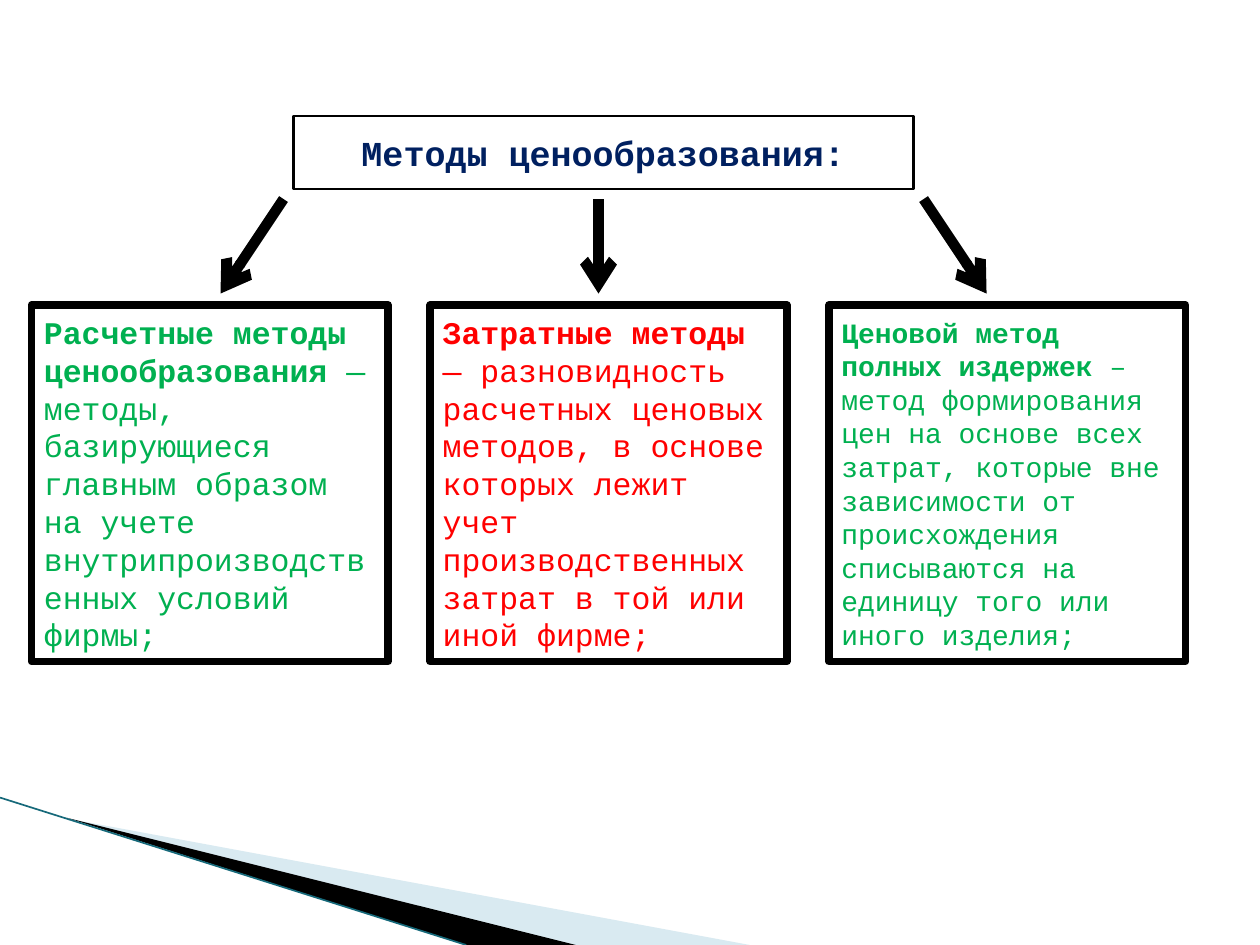
from lxml import etree
from pptx import Presentation
from pptx.dml.color import RGBColor
from pptx.enum.shapes import MSO_CONNECTOR as CONN, MSO_SHAPE as SHAPE
from pptx.enum.text import MSO_ANCHOR as ANCHOR, MSO_AUTO_SIZE as AUTO, PP_ALIGN as ALIGN
from pptx.oxml.ns import qn
from pptx.util import Inches, Pt

FONT = "Courier New"
BLACK, WHITE, NAVY = "000000", "FFFFFF", "002060"
GREEN, RED, PALE, TEAL = "00B050", "FF0000", "A0CBDC", "16697A"


def rgb(value):
    return RGBColor.from_string(value)


def add_run(p, text, size=18, color=BLACK, bold=False):
    r = p.add_run()
    r.text = text
    r.font.name, r.font.size, r.font.bold = FONT, Pt(size), bold
    r.font.color.rgb = rgb(color)


class Deck:
    def __init__(self):
        self.prs = Presentation()
        self.prs.slide_width, self.prs.slide_height = Inches(10), Inches(7.5)
        self.s = self.prs.slides.add_slide(self.prs.slide_layouts[5])

    def outline(self, sp, width):
        sp.fill.solid()
        sp.fill.fore_color.rgb = rgb(WHITE)
        sp.line.color.rgb = rgb(BLACK)
        sp.line.width = Pt(width)

    def title(self, text, x, y, w, h):
        sp = self.s.shapes.title
        sp.left, sp.top, sp.width, sp.height = map(Inches, (x, y, w, h))
        self.outline(sp, 1.5)
        tf = sp.text_frame
        tf.auto_size, tf.vertical_anchor = AUTO.NONE, ANCHOR.MIDDLE
        p = tf.paragraphs[0]
        p.alignment = ALIGN.CENTER
        add_run(p, text, size=20, color=NAVY, bold=True)

    def box(self, x, y, side, term, meaning, size, color):
        sp = self.s.shapes.add_shape(SHAPE.RECTANGLE, *map(Inches, (x, y, side, side)))
        sp.shadow.inherit = False
        self.outline(sp, 4.33)
        tf = sp.text_frame
        tf.word_wrap, tf.vertical_anchor = True, ANCHOR.MIDDLE
        p = tf.paragraphs[0]
        p.alignment = ALIGN.LEFT
        add_run(p, term, size=size, color=color, bold=True)
        add_run(p, meaning, size=size, color=color)

    def line(self, start, end, color, width, arrow=False):
        sp = self.s.shapes.add_connector(CONN.STRAIGHT, *map(Inches, (*start, *end)))
        sp.line.color.rgb = rgb(color)
        sp.line.width = Pt(width)
        if arrow:
            etree.SubElement(sp.line._get_or_add_ln(), qn("a:tailEnd"), type="arrow")
        etree.SubElement(sp._element.spPr, qn("a:effectLst"))

    def wedge(self, points, color, alpha=None):
        first, *rest = [(Inches(x), Inches(y)) for x, y in points]
        builder = self.s.shapes.build_freeform(*first)
        builder.add_line_segments(rest, close=True)
        sp = builder.convert_to_shape()
        sp.shadow.inherit = False
        sp.fill.solid()
        sp.fill.fore_color.rgb = rgb(color)
        sp.line.fill.background()
        if alpha is not None:
            clr = sp._element.spPr.find(qn("a:solidFill"))[0]
            etree.SubElement(clr, qn("a:alpha"), val=str(alpha * 1000))


METHODS = [
    ("Расчетные методы ценообразования",
     " — методы, базирующиеся главным образом на учете "
     "внутрипроизводственных условий фирмы;", 18, GREEN),
    ("Затратные методы",
     " — разновидность расчетных ценовых методов, в основе которых лежит учет "
     "производственных затрат в той или иной фирме;", 18, RED),
    ("Ценовой метод полных издержек ",
     "– метод формирования цен на основе всех затрат, которые вне зависимости "
     "от происхождения списываются на единицу того или иного изделия;", 16, GREEN),
]


def main():
    deck = Deck()

    # Corner decoration
    deck.wedge([(0.55, 6.5), (5.95, 7.5), (4.56, 7.5)], PALE, alpha=40)
    deck.wedge([(0.53, 6.49), (4.57, 7.5), (3.7, 7.5)], BLACK)
    deck.line((0, 6.33), (3.7, 7.5), TEAL, 0.95)

    # Heading and the three methods
    deck.title("Методы ценообразования:", 2.33, 0.92, 4.92, 0.58)
    for i, method in enumerate(METHODS):
        deck.box(0.25 + 3.165 * i, 2.42, 2.83, *method)

    # Arrows from the heading to each method
    for start_x, end_x in [(2.25, 1.75), (7.33, 7.83), (4.75, 4.75)]:
        deck.line((start_x, 1.58), (end_x, 2.33), BLACK, 6, arrow=True)

    deck.prs.save("out.pptx")


if __name__ == "__main__":
    main()
